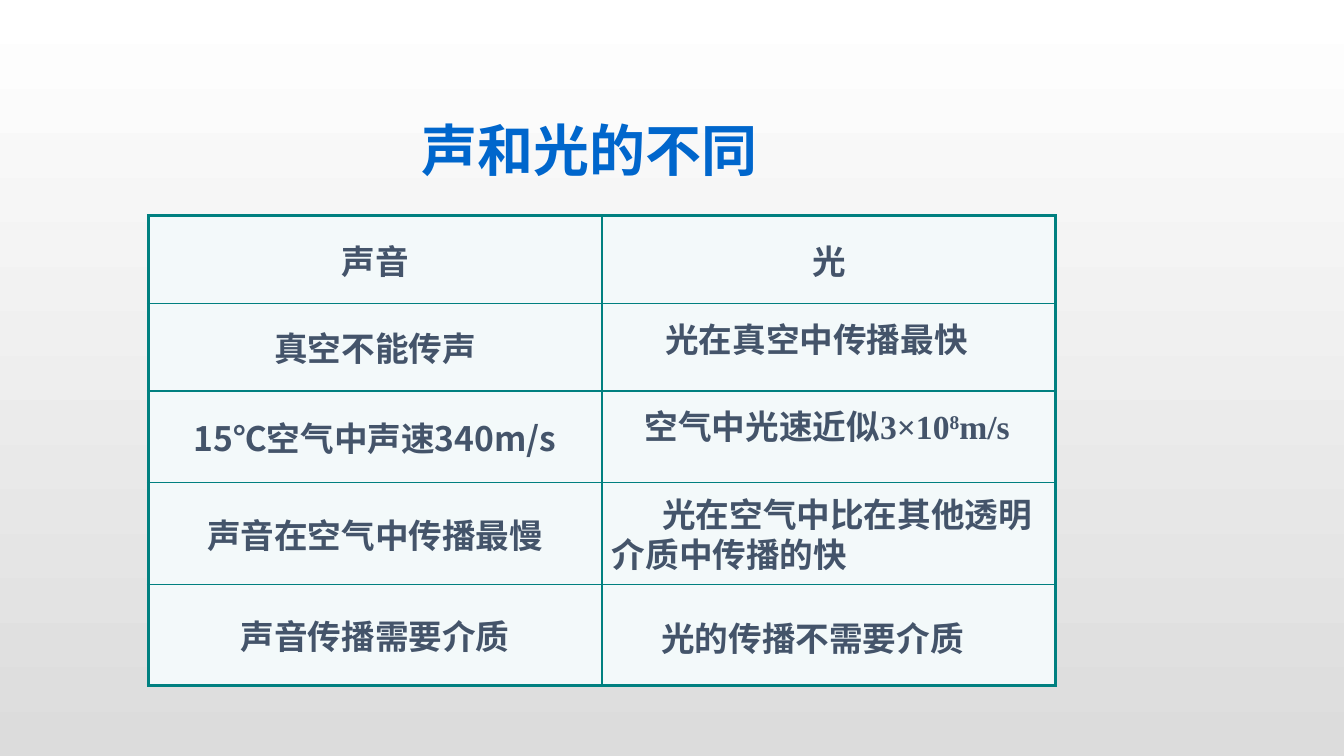
"""Builds a slide that compares sound and light in a two-column table."""
from lxml import etree
from pptx import Presentation
from pptx.dml.color import RGBColor
from pptx.enum.text import MSO_ANCHOR, MSO_AUTO_SIZE, PP_ALIGN
from pptx.oxml.ns import qn
from pptx.util import Inches, Pt

MIDDLE = MSO_ANCHOR.MIDDLE
GROW = MSO_AUTO_SIZE.SHAPE_TO_FIT_TEXT
LEFT, CENTER = PP_ALIGN.LEFT, PP_ALIGN.CENTER
SANS, LATIN, SERIF = "Noto Sans CJK SC", "Arial", "Times New Roman"
TEAL, PALE, SLATE, BLUE = "008080", "F3F9FA", "44546A", "0066CC"


def color(code):
    return RGBColor.from_string(code)


def write(para, parts, face, size=24, ink=SLATE, align=LEFT):
    para.alignment = align
    if align == CENTER:
        gap = etree.SubElement(para._p.get_or_add_pPr(), qn("a:spcBef"))
        etree.SubElement(gap, qn("a:spcPct")).set("val", "20000")
    for text, base in parts:
        run = para.add_run()
        run.text = text
        for name, value in {"size": Pt(size), "bold": True, "name": face}.items():
            setattr(run.font, name, value)
        run.font.color.rgb = color(ink)
        props = run._r.get_or_add_rPr()
        etree.SubElement(props, qn("a:ea")).set("typeface", SANS)
        if base:
            props.set("baseline", str(base * 1000))


deck = Presentation()
deck.slide_width, deck.slide_height = Inches(13.33), Inches(7.5)
slide = deck.slides.add_slide(deck.slide_layouts[6])

back = slide.background.fill
back.gradient()
back.gradient_angle = 270
for stop, code, spot in zip(back.gradient_stops, ("FFFFFF", "DCDCDC"), (0, 1)):
    stop.color.rgb = color(code)
    stop.position = spot

rows = [("声音", "光"), ("真空不能传声", ""), ("15℃空气中声速340m/s", ""),
        ("声音在空气中传播最慢", ""), ("声音传播需要介质", "")]
highs = [0.87, 0.87, 0.91, 1.01, 1]
frame = slide.shapes.add_table(len(rows), 2, Inches(1.47), Inches(2.14),
                               Inches(9), Inches(sum(highs)))
table = frame.table
for col in table.columns:
    col.width = Inches(4.5)
for r, (row, high) in enumerate(zip(rows, highs)):
    table.rows[r].height = Inches(high)
    for c, text in enumerate(row):
        cell = table.cell(r, c)
        cell.vertical_anchor = MIDDLE
        edges = {"L": c == 0, "R": c == 1, "T": r == 0, "B": r == len(rows) - 1}
        for side, outer in edges.items():
            line = etree.SubElement(cell._tc.get_or_add_tcPr(), qn("a:ln" + side))
            line.set("w", str(Pt(2.25 if outer else 1)))
            fill = etree.SubElement(line, qn("a:solidFill"))
            etree.SubElement(fill, qn("a:srgbClr")).set("val", TEAL)
        cell.fill.solid()
        cell.fill.fore_color.rgb = color(PALE)
        if text:
            write(cell.text_frame.paragraphs[0], [(text, 0)], SANS, align=CENTER)

speed = [("空气中光速近似3×10", 0), ("8", 30), ("m/s", 0)]
notes = [
    (4.08, 1.1, 4.25, 0.77, [("声和光的不同", 0)], 0, {"face": LATIN, "size": 40, "ink": BLUE}),
    (6.5, 3.11, 3.38, 0.5, [("光在真空中传播最快", 0)], 0, {"face": LATIN}),
    (5.94, 3.98, 4.53, 0.5, speed, 0, {"face": SERIF, "align": CENTER}),
    (5.97, 4.85, 4.6, 0.91, [("光在空气中比在其他透明介质中传播的快", 0)], 0.5, {"face": LATIN}),
    (6.46, 6.08, 3.48, 0.5, [("光的传播不需要介质", 0)], 0, {"face": LATIN}),
]
for *place, parts, dent, look in notes:
    frame = slide.shapes.add_textbox(*map(Inches, place)).text_frame
    for name, value in {"word_wrap": True, "auto_size": GROW}.items():
        setattr(frame, name, value)
    para = frame.paragraphs[0]
    write(para, parts, **look)
    if dent:
        para._p.get_or_add_pPr().set("indent", str(Inches(dent)))

deck.save("out.pptx")
